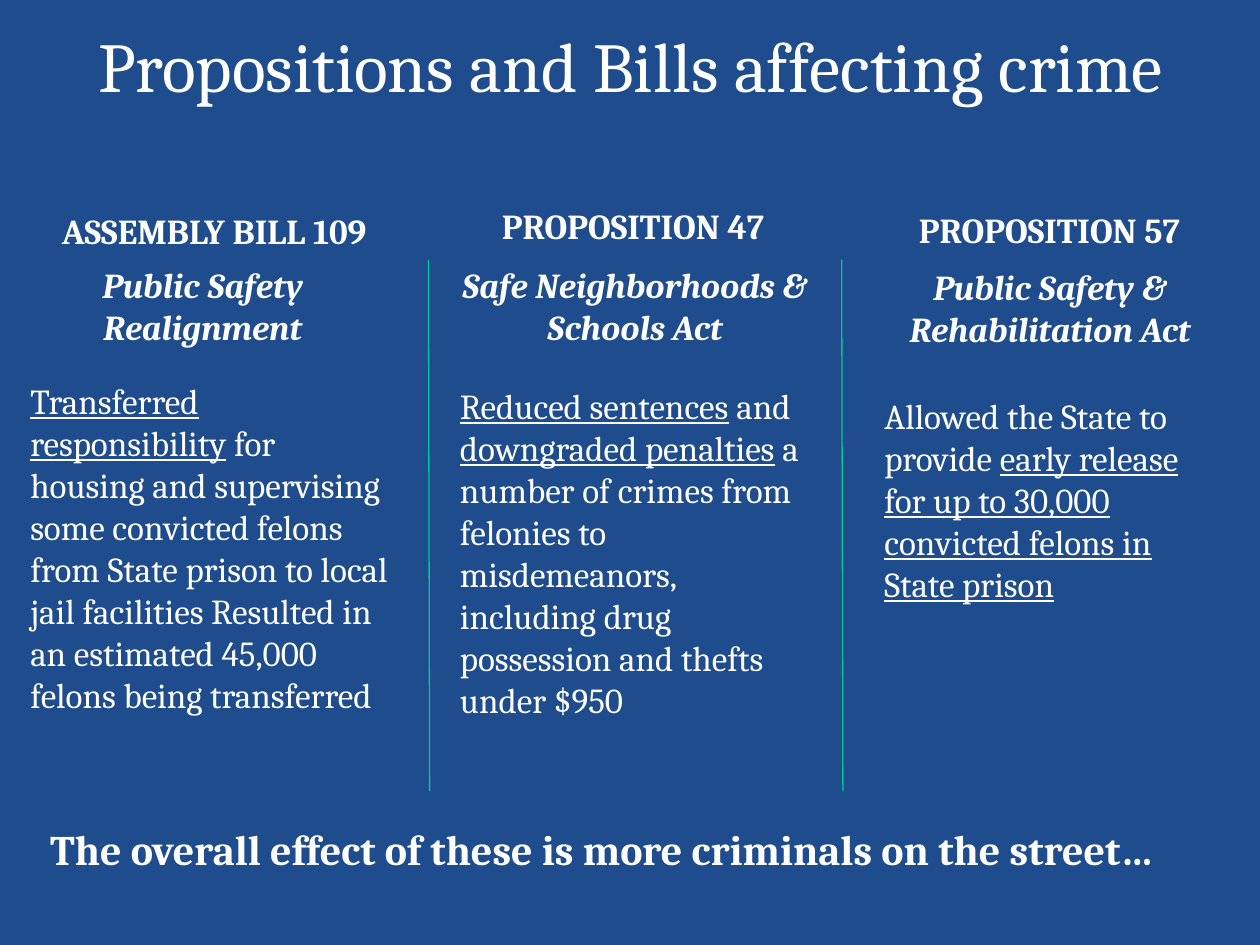
from lxml import etree
from pptx import Presentation
from pptx.dml.color import RGBColor
from pptx.enum import shapes, text
from pptx.oxml import ns
from pptx.util import Inches, Pt

BLUE = RGBColor(0x1F, 0x4C, 0x8C)
GREEN = RGBColor(0x00, 0xC8, 0x96)
WHITE = RGBColor(0xFF, 0xFF, 0xFF)
FONT = "Cambria"

# Content: boxes are (left, top, width, height); body runs are (text, underlined)
TITLE = "Propositions and Bills affecting crime"
CONCLUSION = "The overall effect of these is more criminals on the street…"
COLUMNS = [
    {
        "heading": ("ASSEMBLY BILL 109", (0.24, 1.42, 2.92, 0.63)),
        "subtitle": ("Public Safety Realignment", (-0.09, 2.04, 3.4, 0.77)),
        "body": ([("Transferred responsibility", True),
                  (" for housing and supervising some convicted felons from State "
                   "prison to local jail facilities Resulted in an estimated 45,000 "
                   "felons being transferred", False)], (0.14, 2.96, 3.11, 3.93)),
    },
    {
        "heading": ("PROPOSITION 47", (3.82, 1.54, 2.41, 0.47)),
        "subtitle": ("Safe Neighborhoods & Schools Act", (3.41, 2.04, 3.26, 0.79)),
        "body": ([("Reduced sentences", True), (" and ", False),
                  ("downgraded penalties", True),
                  (" a number of crimes from felonies to misdemeanors, including "
                   "drug possession and thefts under $950", False)],
                 (3.55, 3, 2.97, 3.93)),
    },
    {
        "heading": ("PROPOSITION 57", (7.13, 1.41, 2.4, 0.63)),
        "subtitle": ("Public Safety & Rehabilitation Act", (6.67, 2.06, 3.33, 0.77)),
        "body": ([("Allowed the State to provide ", False),
                  ("early release for up to 30,000 convicted felons in State prison",
                   True)], (6.92, 3.08, 2.83, 2.58)),
    },
]
DIVIDERS = [3.4, 6.68]

presentation = Presentation()
presentation.slide_width, presentation.slide_height = Inches(10), Inches(7.5)
slide = presentation.slides.add_slide(presentation.slide_layouts.get_by_name("Comparison"))
slide.background.fill.solid()
slide.background.fill.fore_color.rgb = BLUE


def write(runs, box, size, shape=None, bold=False, italic=False,
          align=text.PP_ALIGN.LEFT, anchor=text.MSO_ANCHOR.TOP, spacing=1.0):
    """Fill a placeholder, or a new text box, with one paragraph of runs."""
    box = [Inches(length) for length in box]
    if shape is None:
        shape = slide.shapes.add_textbox(*box)
    shape.left, shape.top, shape.width, shape.height = box
    frame = shape.text_frame
    frame.word_wrap = True
    frame.auto_size = text.MSO_AUTO_SIZE.NONE
    frame.vertical_anchor = anchor
    paragraph = frame.paragraphs[0]
    paragraph.alignment = align
    paragraph.line_spacing = spacing
    paragraph.space_before = Pt(0)
    properties = paragraph._p.get_or_add_pPr()
    properties.set("marL", "0")
    properties.set("indent", "0")
    etree.SubElement(properties, ns.qn("a:buNone"))
    for content, underlined in runs:
        run = paragraph.add_run()
        run.text = content
        font = run.font
        font.name, font.size = FONT, Pt(size)
        font.bold, font.italic, font.underline = bold, italic, underlined
        font.color.rgb = WHITE


# Title
CENTER = text.PP_ALIGN.CENTER
write([(TITLE, False)], (0.28, 0.13, 9.45, 1.25), 40, slide.shapes.title, align=CENTER)

# Columns: the layout has heading and body placeholders for the first two
placeholders = {shape.placeholder_format.idx: shape for shape in slide.placeholders}
for index, column in enumerate(COLUMNS):
    heading, box = column["heading"]
    write([(heading, False)], box, 20, placeholders.get(2 * index + 1), bold=True,
          align=CENTER, anchor=text.MSO_ANCHOR.BOTTOM, spacing=0.9)
    subtitle, box = column["subtitle"]
    write([(subtitle, False)], box, 20, bold=True, italic=True, align=CENTER)
    runs, box = column["body"]
    write(runs, box, 20, placeholders.get(2 * index + 2))

# Dividers between columns
for x in DIVIDERS:
    divider = slide.shapes.add_connector(
        shapes.MSO_CONNECTOR.STRAIGHT,
        Inches(x), Inches(2.06), Inches(x + 0.01), Inches(6.28))
    divider.line.color.rgb = GREEN
    divider.line.width = Pt(0.75)
    etree.SubElement(divider._element.spPr, ns.qn("a:effectLst"))

# Conclusion
write([(CONCLUSION, False)], (0.3, 6.49, 9.45, 0.91), 24, bold=True)

presentation.save("out.pptx")
